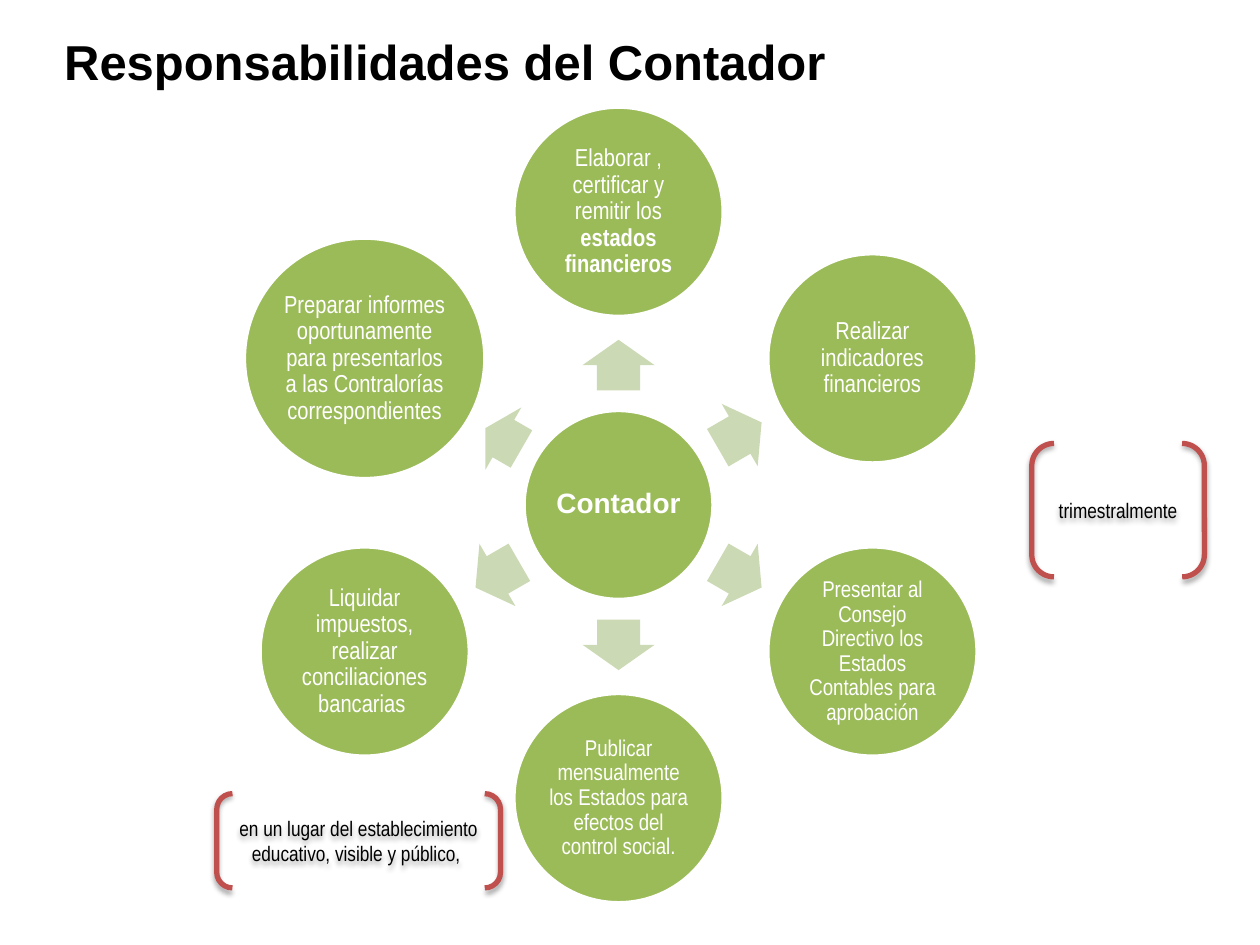
from math import cos, radians, sin

from lxml.etree import SubElement as Sub
from pptx import Presentation
from pptx.dml.color import RGBColor
from pptx.enum.shapes import MSO_SHAPE as Kind
from pptx.enum.text import MSO_ANCHOR as Anchor, PP_ALIGN as Align
from pptx.oxml.ns import qn
from pptx.util import Cm, Pt

GREEN, PALE, RED = "9BBB59", "CBDAB5", "C0504D"
WHITE, BLACK = "FFFFFF", "000000"
NARROW = "Arial Narrow"
BALL, BIG, HUB = 4.22, 4.85, 3.81

STEPS = [
    ("Elaborar , certificar y remitir los ", "estados financieros", 14, BALL),
    ("Realizar indicadores financieros", "", 14, BALL),
    ("Presentar al Consejo Directivo los Estados Contables para aprobación", "", 13, BALL),
    ("Publicar mensualmente los Estados para efectos del control social.", "", 13, BALL),
    ("Liquidar impuestos, realizar conciliaciones bancarias ", "", 14, BALL),
    ("Preparar informes oportunamente para presentarlos a las Contralorías "
     "correspondientes", "", 14, BIG),
]
NOTES = [
    ("trimestralmente", (20.8, 8.94, 3.48, 2.69)),
    ("en un lugar del establecimiento educativo, visible y público, ",
     (4.37, 16, 5.72, 1.9)),
]


def color(code):
    return RGBColor.from_string(code)


def write(shape, text, tail="", size=14, face=NARROW, ink=WHITE, bold=False,
          align=Align.CENTER, space=None, inset=None):
    frame = shape.text_frame
    frame.word_wrap = True
    frame.vertical_anchor = Anchor.MIDDLE
    if inset is not None:
        frame.margin_left = frame.margin_right = Cm(inset)
        frame.margin_top = frame.margin_bottom = Cm(inset)
    para = frame.paragraphs[0]
    para.alignment = align
    if space:
        para.line_spacing = space
    for part, heavy in ((text, bold), (tail, True)):
        if part:
            run = para.add_run()
            run.text = part
            font = run.font
            font.name, font.size, font.bold = face, Pt(size), heavy
            font.color.rgb = color(ink)


def draw(shapes, kind, box, fill=None, line=None, width=2):
    shape = shapes.add_shape(kind, *map(Cm, box))
    shape.shadow.inherit = False
    if fill:
        shape.fill.solid()
        shape.fill.fore_color.rgb = color(fill)
    else:
        shape.fill.background()
    if line:
        shape.line.color.rgb = color(line)
        shape.line.width = Pt(width)
    else:
        shape.line.fill.background()
    return shape


def around(mid, angle, reach, wide, high):
    turn = radians(angle)
    return (mid[0] + reach * cos(turn) - wide / 2,
            mid[1] + reach * sin(turn) - high / 2, wide, high)


def add_ball(shapes, box, text, **style):
    ball = draw(shapes, Kind.OVAL, box, GREEN, WHITE)
    write(ball, text, space=0.9, inset=0.05, **style)


def add_wheel(slide, box):
    left, top, wide, high = box
    mid = left + wide / 2, top + high / 2
    reach = (wide - BALL) / 2
    shapes = slide.shapes.add_group_shape().shapes
    add_ball(shapes, around(mid, 0, 0, HUB, HUB), "Contador",
             size=16, face="Arial", bold=True)
    for place, (text, tail, size, span) in enumerate(STEPS):
        angle = 60 * place - 90
        gap, long = (2.68, 0.84) if span == BIG else (2.82, 1.02)
        arrow = draw(shapes, Kind.RIGHT_ARROW,
                     around(mid, angle, gap, long, 1.45), PALE)
        arrow.adjustments[0], arrow.adjustments[1] = 0.6, 0.5
        arrow.rotation = angle % 360
        add_ball(shapes, around(mid, angle, reach, span, span), text,
                 tail=tail, size=size)


def add_shadow(shape):
    effects = shape._element.spPr.find(qn("a:effectLst"))
    outer = Sub(effects, qn("a:outerShdw"), blurRad=str(Pt(3.1)),
                dist=str(Pt(1.8)), dir="5400000", rotWithShape="0")
    tone = Sub(outer, qn("a:srgbClr"), val=BLACK)
    Sub(tone, qn("a:alpha"), val="35000")


def add_note(slide, text, box):
    note = draw(slide.shapes, Kind.DOUBLE_BRACKET, box, line=RED, width=3)
    add_shadow(note)
    write(note, text, size=12, ink=BLACK)


def add_title(slide, text, box):
    title = slide.shapes.title
    title.left, title.top, title.width, title.height = map(Cm, box)
    write(title, text, size=28, face="Arial", ink=BLACK, bold=True,
          align=Align.LEFT)


def main():
    deck = Presentation()
    deck.slide_width, deck.slide_height = Cm(25.4), Cm(19.05)
    slide = deck.slides.add_slide(deck.slide_layouts[5])
    add_title(slide, "Responsabilidades del Contador", (1.04, 0.08, 22.86, 2.29))
    add_wheel(slide, (4.45, 2.16, 16.04, 16.04))
    for text, box in NOTES:
        add_note(slide, text, box)
    deck.save("out.pptx")


if __name__ == "__main__":
    main()
